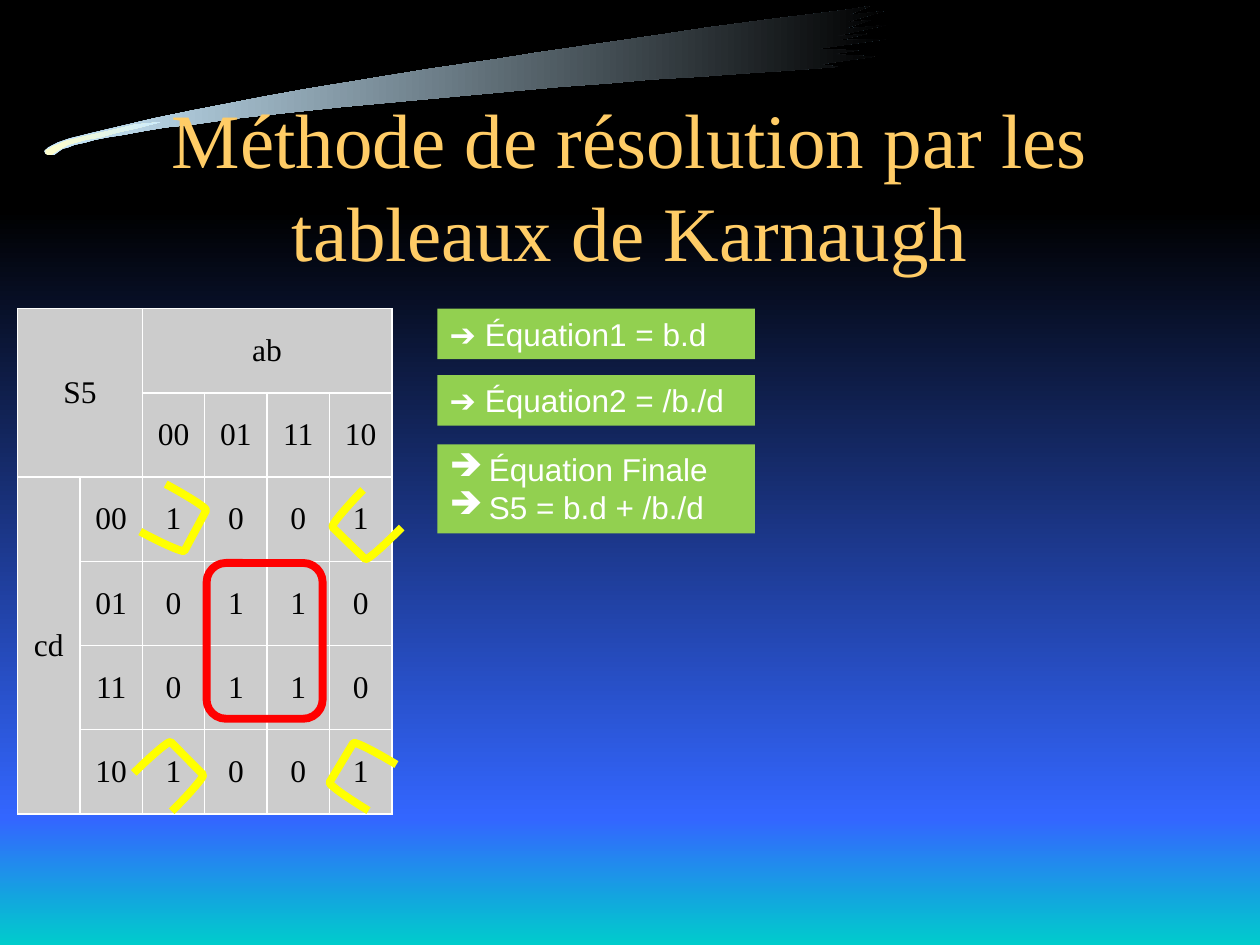
from dataclasses import dataclass

from lxml.etree import SubElement
from pptx import Presentation
from pptx.dml.color import RGBColor
from pptx.enum.shapes import MSO_SHAPE as Preset
from pptx.enum.text import MSO_ANCHOR as Anchor, PP_ALIGN as Align
from pptx.oxml.ns import qn
from pptx.util import Emu, Inches, Pt

BLACK = RGBColor(0x00, 0x00, 0x00)
WHITE = RGBColor(0xFF, 0xFF, 0xFF)
BLUE = RGBColor(0x33, 0x66, 0xFF)
TEAL = RGBColor(0x00, 0xCC, 0xCC)
ICE = RGBColor(0xCC, 0xEC, 0xFF)
CREAM = RGBColor(0xFF, 0xFF, 0xCC)
GOLD = RGBColor(0xFF, 0xCC, 0x66)
GREEN = RGBColor(0x92, 0xD0, 0x50)
GREY = RGBColor(0xCC, 0xCC, 0xCC)
RED = RGBColor(0xFF, 0x00, 0x00)
YELLOW = RGBColor(0xFF, 0xFF, 0x00)

SERIF, SANS = "Times New Roman", "Arial"
WIDTH, HEIGHT = Inches(10), Inches(7.5)
ARROW = "➔"

# Karnaugh grid: its origin and its cell size
GRID_LEFT, GRID_TOP = Inches(0.14), Inches(2.45)
COLUMN, ROW = Inches(2.97) // 6, Inches(4.01) // 6


@dataclass(frozen=True)
class Area:
    """A rectangle in columns and rows of the Karnaugh grid."""
    column: float
    row: float
    columns: float
    rows: float

    def place(self) -> tuple[int, int, int, int]:
        return (Emu(int(GRID_LEFT + self.column * COLUMN)), Emu(int(GRID_TOP + self.row * ROW)),
                Emu(int(self.columns * COLUMN)), Emu(int(self.rows * ROW)))


@dataclass(frozen=True)
class Equation:
    row: float
    rows: float
    lines: tuple[str, ...]
    bulleted: bool = False


@dataclass(frozen=True)
class Corner:
    """A bracket around a corner cell, given by its centre."""
    column: float
    row: float
    angle: float


EQUATIONS = (
    Equation(0, 0.6, (f"{ARROW} Équation1 = b.d",)),
    Equation(0.79, 0.6, (f"{ARROW} Équation2 = /b./d",)),
    Equation(1.61, 1.06, ("Équation Finale", "S5 = b.d + /b./d"), True),
)
CORNERS = (
    Corner(5.58, 2.58, 314.2),
    Corner(2.44, 5.54, 135.3),
    Corner(5.52, 5.54, 31.2),
    Corner(2.51, 2.5, 208.2),
)
KARNAUGH = (
    ("S5", "", "ab", "", "", ""),
    ("", "", "00", "01", "11", "10"),
    ("cd", "00", "1", "0", "0", "1"),
    ("", "01", "0", "1", "1", "0"),
    ("", "11", "0", "1", "1", "0"),
    ("", "10", "1", "0", "0", "1"),
)
MERGES = (((0, 0), (1, 1)), ((0, 2), (0, 5)), ((2, 0), (5, 0)))

# Comet outlines, in hundredths of an inch
COMET_TAIL = (
    (665, 53), (650, 51), (694, 45), (660, 43), (681, 40), (647, 39), (703, 31), (664, 32),
    (688, 27), (661, 29), (703, 20), (669, 23), (691, 16), (670, 18), (701, 9), (673, 12),
    (690, 5), (671, 8), (647, 11), (614, 15), (561, 22), (528, 27), (494, 32), (425, 42),
    (394, 47), (373, 50), (339, 55), (296, 62), (241, 71), (208, 77), (151, 88), (122, 94),
    (71, 106), (55, 110), (46, 113), (38, 117), (36, 119), (35, 120), (36, 122), (38, 123),
    (43, 123), (47, 120), (50, 118), (54, 117), (59, 115), (68, 113), (75, 111), (85, 109),
    (98, 107), (114, 104), (132, 101), (152, 99), (187, 94), (214, 91), (270, 85), (335, 79),
    (389, 74), (443, 69), (484, 66), (517, 63), (553, 61), (594, 58), (625, 56),
)
COMET_HEAD = (
    (36, 119), (39, 118), (42, 116), (45, 115), (52, 112), (64, 109), (86, 104), (107, 99),
    (127, 97), (108, 102), (94, 105), (80, 109), (68, 111), (54, 115), (47, 119), (44, 121),
    (41, 123), (38, 123), (36, 122), (36, 121),
)


def add_span(para, text: str, font: str, size: float, color: RGBColor) -> None:
    span = para.add_run()
    span.text = text
    span.font.name, span.font.size = font, Pt(size)
    span.font.color.rgb = color


def paint_gradient(shape, start: RGBColor, end: RGBColor, angle: float) -> None:
    shape.shadow.inherit = False
    shape.line.fill.background()
    shape.fill.gradient()
    shape.fill.gradient_angle = angle
    for stop, color in zip(shape.fill.gradient_stops, (start, end)):
        stop.color.rgb = color


def add_band(page, top: float, bottom: float, start: RGBColor, end: RGBColor) -> None:
    band = page.shapes.add_shape(Preset.RECTANGLE, 0, int(top * HEIGHT),
                                 WIDTH, int((bottom - top) * HEIGHT))
    paint_gradient(band, start, end, 270)


def add_comet_part(page, points: tuple, start: RGBColor, end: RGBColor) -> None:
    builder = page.shapes.build_freeform(*points[0], scale=Inches(1) / 100)
    builder.add_line_segments(points[1:], close=True)
    paint_gradient(builder.convert_to_shape(), start, end, 0)


def add_title(page, text: str) -> None:
    box = page.shapes.add_textbox(int(0.075 * WIDTH), int(0.11 * HEIGHT),
                                  int(0.85 * WIDTH), int(0.17 * HEIGHT))
    frame = box.text_frame
    frame.word_wrap, frame.vertical_anchor = True, Anchor.MIDDLE
    para = frame.paragraphs[0]
    para.alignment = Align.CENTER
    add_span(para, text, SERIF, 44, GOLD)


def add_equation(page, equation: Equation) -> None:
    area = Area(6.73, equation.row, 5.09, equation.rows)
    box = page.shapes.add_shape(Preset.RECTANGLE, *area.place())
    box.shadow.inherit = False
    box.fill.solid()
    box.fill.fore_color.rgb = GREEN
    box.line.fill.background()
    frame = box.text_frame
    frame.word_wrap, frame.vertical_anchor = True, Anchor.TOP
    for index, line in enumerate(equation.lines):
        para = frame.add_paragraph() if index else frame.paragraphs[0]
        para.alignment = Align.LEFT
        if equation.bulleted:
            settings = para._p.get_or_add_pPr()
            indent = Inches(0.31)
            settings.set("marL", str(indent))
            settings.set("indent", str(-indent))
            SubElement(settings, qn("a:buChar"), char=ARROW)
        add_span(para, line, SANS, 18, WHITE)


def style_cell(cell, text: str) -> None:
    cell.margin_left = cell.margin_right = Inches(0.07)
    cell.margin_top = cell.margin_bottom = 0
    cell.vertical_anchor = Anchor.MIDDLE
    settings = cell._tc.get_or_add_tcPr()
    for side in ("a:lnL", "a:lnR", "a:lnT", "a:lnB"):
        border = SubElement(settings, qn(side), w=str(Pt(1)))
        SubElement(SubElement(border, qn("a:solidFill")), qn("a:srgbClr"), val=str(WHITE))
    cell.fill.solid()
    cell.fill.fore_color.rgb = GREY
    if text:
        para = cell.text_frame.paragraphs[0]
        para.alignment = Align.CENTER
        add_span(para, text, SERIF, 18, BLACK)


def add_karnaugh(page) -> None:
    table = page.shapes.add_table(6, 6, *Area(0, 0, 6, 6).place()).table
    table.first_row = table.horz_banding = False
    for column in table.columns:
        column.width = COLUMN
    for row, texts in zip(table.rows, KARNAUGH):
        row.height = ROW
        for cell, text in zip(row.cells, texts):
            style_cell(cell, text)
    for first, last in MERGES:
        table.cell(*first).merge(table.cell(*last))


def add_loop(page, preset: Preset, area: Area, color: RGBColor, angle: float = 0) -> None:
    loop = page.shapes.add_shape(preset, *area.place())
    loop.shadow.inherit = False
    loop.fill.background()
    loop.line.color.rgb, loop.line.width = color, Pt(4.5)
    loop.rotation = angle


def main() -> None:
    deck = Presentation()
    deck.slide_width, deck.slide_height = WIDTH, HEIGHT
    page = deck.slides.add_slide(deck.slide_layouts[6])

    # Night sky with a comet
    page.background.fill.solid()
    page.background.fill.fore_color.rgb = BLACK
    add_band(page, 2 / 9, 13 / 15, BLACK, BLUE)
    add_band(page, 13 / 15, 1, BLUE, TEAL)
    add_comet_part(page, COMET_TAIL, ICE, BLACK)
    add_comet_part(page, COMET_HEAD, CREAM, ICE)

    # Title, equations and table
    add_title(page, "Méthode de résolution par les tableaux de Karnaugh")
    for equation in EQUATIONS:
        add_equation(page, equation)
    add_karnaugh(page)

    # Groupings of ones: the centre block, then the four corners
    add_loop(page, Preset.ROUNDED_RECTANGLE, Area(3.03, 3.02, 1.86, 1.85), RED)
    wide, high = 0.77, 0.64
    for corner in CORNERS:
        area = Area(corner.column - wide / 2, corner.row - high / 2, wide, high)
        add_loop(page, Preset.LEFT_BRACKET, area, YELLOW, corner.angle)

    deck.save("out.pptx")


if __name__ == "__main__":
    main()
